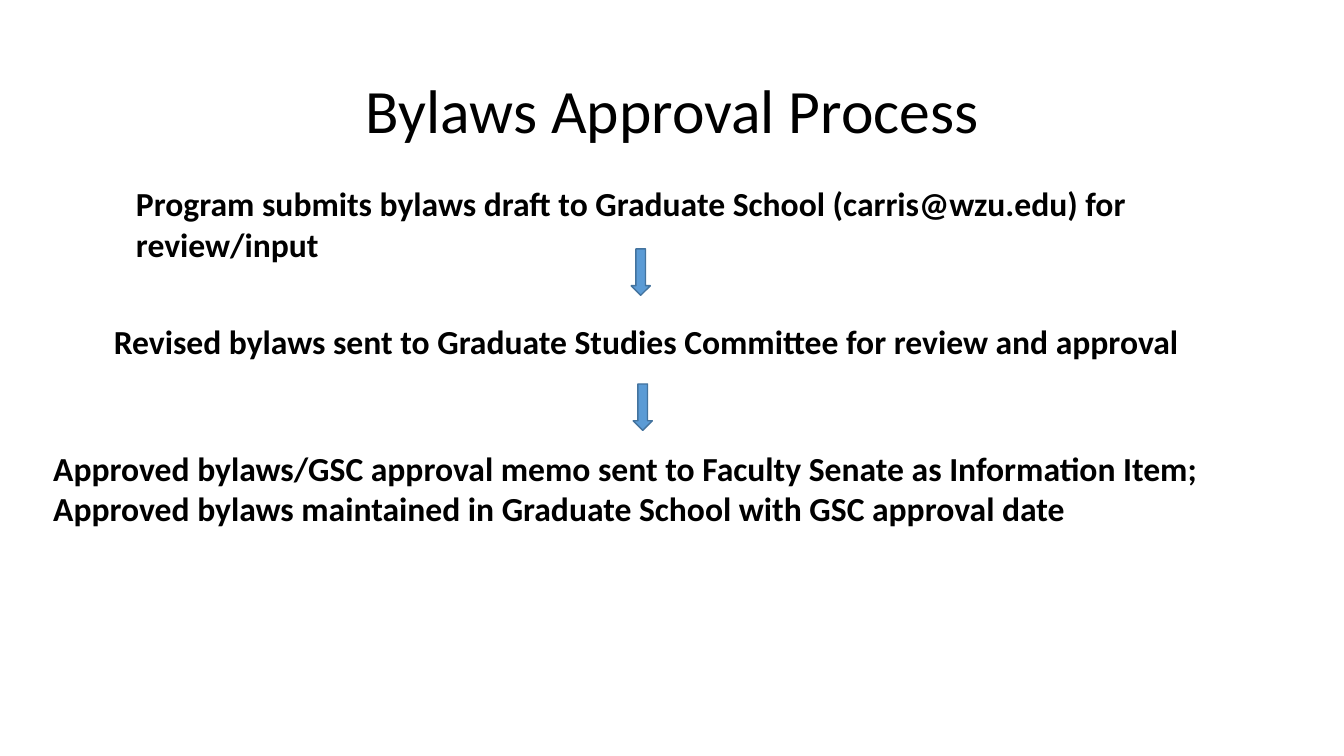
from pptx import Presentation
from pptx.dml.color import RGBColor
from pptx.enum.shapes import MSO_SHAPE as Shape
from pptx.enum.text import MSO_ANCHOR as Anchor, PP_ALIGN as Align
from pptx.util import Inches, Pt

COLORS = {"text": "000000", "arrow": "5B9BD5", "edge": "43739E"}
FONT = "Calibri"


class ProcessSlide:
    """Holds the style and the current slide."""

    def __init__(self, deck):
        self.page = deck.slides.add_slide(deck.slide_layouts[6])

    def color(self, name):
        return RGBColor.from_string(COLORS[name])

    def text(self, words, place, font, para_format=None, anchor=Anchor.TOP):
        box = self.page.shapes.add_textbox(*map(Inches, place))
        frame = box.text_frame
        frame.word_wrap = True
        frame.vertical_anchor = anchor
        para = frame.paragraphs[0]
        for name, value in (para_format or {}).items():
            setattr(para, name, value)
        span = para.add_run()
        span.text = words
        for name, value in {"name": FONT, **font}.items():
            setattr(span.font, name, value)
        span.font.color.rgb = self.color("text")

    def down_arrow(self, left, top):
        arrow = self.page.shapes.add_shape(
            Shape.DOWN_ARROW, *map(Inches, (left, top, 0.19, 0.46)))
        arrow.shadow.inherit = False
        arrow.fill.solid()
        arrow.fill.fore_color.rgb = self.color("arrow")
        arrow.line.color.rgb = self.color("edge")
        arrow.line.width = Pt(1)


def main():
    deck = Presentation()
    deck.slide_width, deck.slide_height = Inches(13.33), Inches(7.5)
    slide = ProcessSlide(deck)

    # Title
    slide.text("Bylaws Approval Process", (0.92, 0.4, 11.5, 1.45),
               {"size": Pt(44)},
               {"alignment": Align.CENTER, "line_spacing": 0.9},
               Anchor.MIDDLE)

    # Approval steps
    steps = [
        ("Program submits bylaws draft to Graduate School "
         "(carris@wzu.edu) for review/input", (1.25, 1.77, 11.08, 0.91)),
        ("Revised bylaws sent to Graduate Studies Committee "
         "for review and approval", (1.03, 3.13, 11.31, 0.5)),
        ("Approved bylaws/GSC approval memo sent to Faculty Senate as "
         "Information Item; Approved bylaws maintained in Graduate School "
         "with GSC approval date", (0.43, 4.39, 11.97, 0.91)),
    ]
    for words, place in steps:
        slide.text(words, place, {"size": Pt(24), "bold": True})

    # Arrows between the steps
    for left, top in [(6.26, 2.47), (6.28, 3.81)]:
        slide.down_arrow(left, top)

    deck.save("out.pptx")


if __name__ == "__main__":
    main()
